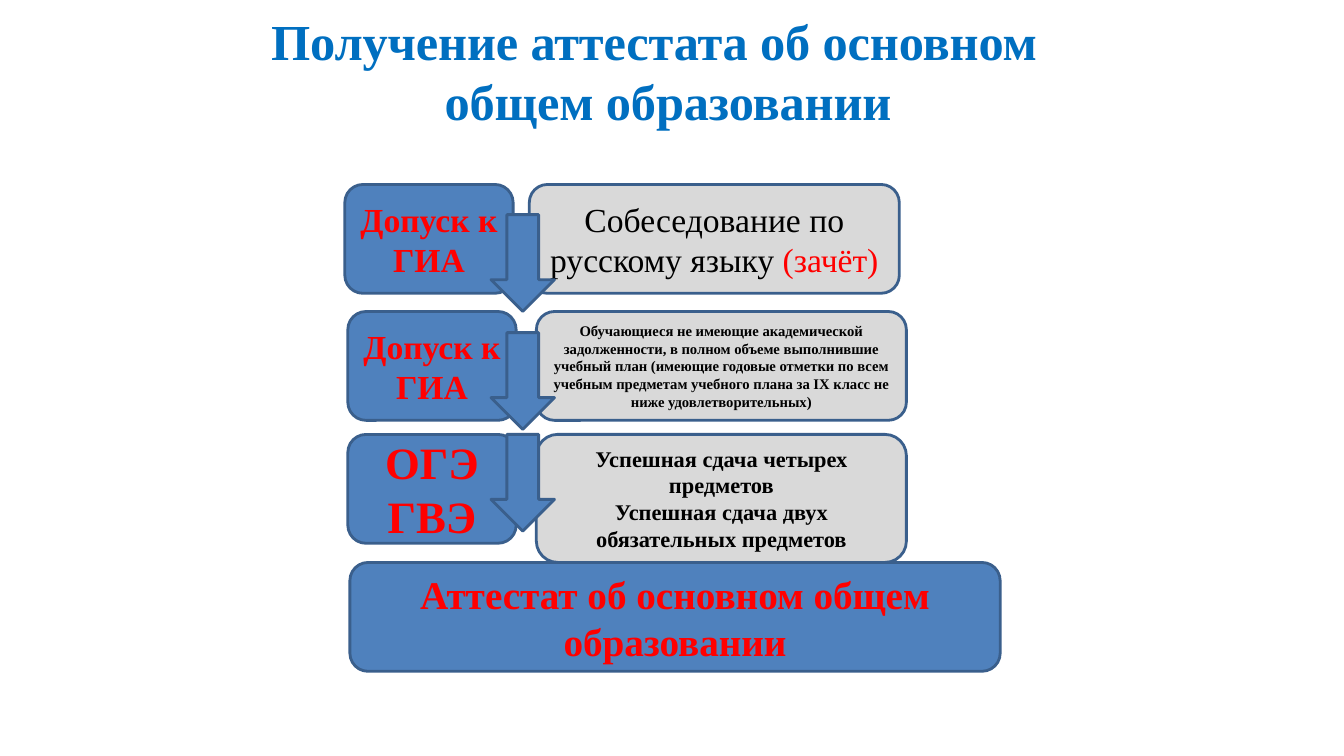
from pptx import Presentation
from pptx.dml.color import RGBColor
from pptx.enum.shapes import MSO_SHAPE
from pptx.enum.text import MSO_ANCHOR, PP_ALIGN
from pptx.util import Pt

ROUNDED = MSO_SHAPE.ROUNDED_RECTANGLE
DOWN_ARROW = MSO_SHAPE.DOWN_ARROW
CENTER = PP_ALIGN.CENTER
MIDDLE = MSO_ANCHOR.MIDDLE

PX = 9144  # 100 px to the inch
FONT = "Times New Roman"
BLUE, GRAY, OUTLINE = "4F81BD", "D9D9D9", "3A5F8C"
RED, BLACK, TITLE_BLUE = "FF0000", "000000", "006FC0"

LABEL_WIDTH, DETAIL_WIDTH, ROW_HEIGHT = 167, 367, 108
ARROW_LEFT, ARROW_WIDTH, ARROW_HEIGHT = 487, 63, 96

LABEL_24 = {"size": Pt(24), "bold": True, "color": RED}
LABEL_32 = {"size": Pt(32), "bold": True, "color": RED}
RESULT = {"size": Pt(28), "bold": True, "color": RED}
INTERVIEW = {"size": Pt(24), "bold": False, "color": BLACK}
PASS_MARK = {"size": Pt(24), "bold": False, "color": RED}
RULES = {"size": Pt(10.5), "bold": True, "color": BLACK}
EXAMS = {"size": Pt(16), "bold": True, "color": BLACK}
TITLE = {"size": Pt(36), "bold": True, "color": TITLE_BLUE}

# Each text is a list of paragraphs, each paragraph a list of (words, format).
STEPS = [
    {
        "label_at": (342, 183), "detail_at": (525, 183),
        "detail_height": ROW_HEIGHT, "arrow_top": 213,
        "label": [[("Допуск к ГИА", LABEL_24)]],
        "detail": [[("Собеседование по русскому языку ", INTERVIEW),
                    ("(зачёт)", PASS_MARK)]],
    },
    {
        "label_at": (345, 309), "detail_at": (532, 309),
        "detail_height": ROW_HEIGHT, "arrow_top": 330,
        "label": [[("Допуск к ГИА", LABEL_24)]],
        "detail": [[("Обучающиеся не имеющие академической задолженности, "
                     "в полном объеме выполнившие учебный план (имеющие "
                     "годовые отметки по всем учебным предметам учебного "
                     "плана за IX класс не ниже удовлетворительных)", RULES)]],
    },
    {
        "label_at": (345, 431), "detail_at": (532, 431),
        "detail_height": 127, "arrow_top": 431,
        "label": [[("ОГЭ", LABEL_32)], [("ГВЭ", LABEL_32)]],
        "detail": [[("Успешная сдача четырех предметов", EXAMS)],
                   [("Успешная сдача двух обязательных предметов", EXAMS)]],
    },
]


def rgb(hex_color):
    return RGBColor.from_string(hex_color)


def emu(box):
    return [length * PX for length in box]


def add_words(paragraph, words, style):
    run = paragraph.add_run()
    run.text = words
    run.font.name = FONT
    for attribute, value in style.items():
        if attribute == "color":
            run.font.color.rgb = rgb(value)
        else:
            setattr(run.font, attribute, value)


def add_figure(slide, kind, box, fill):
    figure = slide.shapes.add_shape(kind, *emu(box))
    figure.shadow.inherit = False
    figure.fill.solid()
    figure.fill.fore_color.rgb = rgb(fill)
    figure.line.color.rgb = rgb(OUTLINE)
    figure.line.width = Pt(2)
    return figure


def add_card(slide, box, fill, text):
    frame = add_figure(slide, ROUNDED, box, fill).text_frame
    frame.word_wrap = True
    frame.vertical_anchor = MIDDLE
    for index, pieces in enumerate(text):
        paragraph = frame.paragraphs[0] if index == 0 else frame.add_paragraph()
        paragraph.alignment = CENTER
        for words, style in pieces:
            add_words(paragraph, words, style)


def add_title(slide, box):
    frame = slide.shapes.add_textbox(*emu(box)).text_frame
    frame.word_wrap = True
    margins = {"margin_left": 0, "margin_top": PX, "margin_right": 0, "margin_bottom": 0}
    for side, margin in margins.items():
        setattr(frame, side, margin)
    heading = frame.paragraphs[0]
    heading.space_before = Pt(1)
    # The hanging indent pushes the second line towards the middle.
    properties = heading._p.get_or_add_pPr()
    properties.set("marL", str(173 * PX))
    properties.set("indent", str(-172 * PX))
    add_words(heading, "Получение аттестата об основном общем образовании", TITLE)
    heading.runs[0].font._element.set("spc", "-10")


def add_steps(slide):
    for step in STEPS:
        add_card(slide, (*step["label_at"], LABEL_WIDTH, ROW_HEIGHT), BLUE, step["label"])
        add_card(slide, (*step["detail_at"], DETAIL_WIDTH, step["detail_height"]),
                 GRAY, step["detail"])
    for step in STEPS:
        add_figure(slide, DOWN_ARROW,
                   (ARROW_LEFT, step["arrow_top"], ARROW_WIDTH, ARROW_HEIGHT), BLUE)


def add_certificate(slide, box):
    add_card(slide, box, BLUE, [[("Аттестат об основном общем образовании", RESULT)]])


def main():
    deck = Presentation()
    deck.slide_width, deck.slide_height = emu((1333, 750))
    slide = deck.slides.add_slide(deck.slide_layouts[6])
    add_title(slide, (268, 9, 767, 123))
    add_steps(slide)
    add_certificate(slide, (347, 558, 645, ROW_HEIGHT))
    deck.save("out.pptx")


if __name__ == "__main__":
    main()
